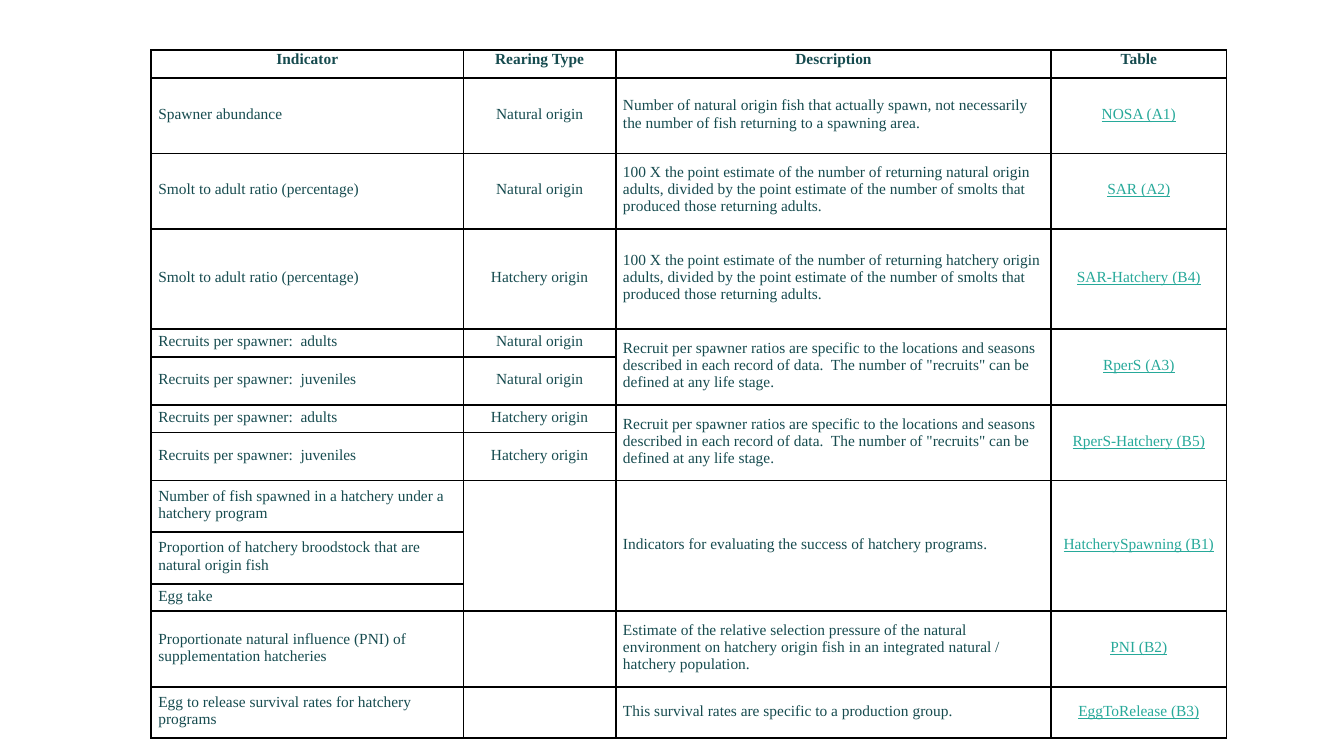
from itertools import takewhile

from lxml.etree import SubElement
from pptx import Presentation
from pptx.dml.color import RGBColor
from pptx.enum.text import MSO_ANCHOR as Anchor, PP_ALIGN as Align
from pptx.oxml.ns import qn
from pptx.util import Cm, Pt

NATURAL, HATCHERY = "Natural origin", "Hatchery origin"
SMOLT_RATIO = "Smolt to adult ratio (percentage)"
RETURN_RATIO = ("100 X the point estimate of the number of returning {} origin adults, divided by "
                "the point estimate of the number of smolts that produced those returning adults.")
RECRUITS = ("Recruit per spawner ratios are specific to the locations and seasons described in "
            "each record of data.  The number of \"recruits\" can be defined at any life stage.")
ADULTS, JUVENILES = "Recruits per spawner:  adults", "Recruits per spawner:  juveniles"

COLUMN_WIDTHS = [7.87, 3.84, 10.97, 4.42]
ROW_HEIGHTS = [0.7, 1.9, 1.9, 2.52, 0.7, 1.21, 0.7, 1.21, 1.3, 1.3, 0.7, 1.9, 1.3]
# None continues the cell above
INDICATORS = [
    ("Indicator", "Rearing Type", "Description", "Table"),
    ("Spawner abundance", NATURAL,
     "Number of natural origin fish that actually spawn, not necessarily the number of fish "
     "returning to a spawning area.", "NOSA (A1)"),
    (SMOLT_RATIO, NATURAL, RETURN_RATIO.format("natural"), "SAR (A2)"),
    (SMOLT_RATIO, HATCHERY, RETURN_RATIO.format("hatchery"), "SAR-Hatchery (B4)"),
    (ADULTS, NATURAL, RECRUITS, "RperS (A3)"),
    (JUVENILES, NATURAL, None, None),
    (ADULTS, HATCHERY, RECRUITS, "RperS-Hatchery (B5)"),
    (JUVENILES, HATCHERY, None, None),
    ("Number of fish spawned in a hatchery under a hatchery program", "",
     "Indicators for evaluating the success of hatchery programs.", "HatcherySpawning (B1)"),
    ("Proportion of hatchery broodstock that are natural origin fish", None, None, None),
    ("Egg take", None, None, None),
    ("Proportionate natural influence (PNI) of supplementation hatcheries", "",
     "Estimate of the relative selection pressure of the natural environment on hatchery origin "
     "fish in an integrated natural / hatchery population.", "PNI (B2)"),
    ("Egg to release survival rates for hatchery programs", "",
     "This survival rates are specific to a production group.", "EggToRelease (B3)"),
]


def color(hex_code):
    return RGBColor.from_string(hex_code)


def write(frame, text, font, size, ink, bold=False, underline=False, align=Align.LEFT):
    paragraph = frame.paragraphs[0]
    paragraph.alignment = align
    run = paragraph.add_run()
    run.text = text
    run.font.name, run.font.size = font, Pt(size)
    run.font.bold, run.font.underline = bold, underline
    run.font.color.rgb = color(ink)


class IndicatorSlide:
    font, size = "Times New Roman", 11
    ink, link, rule = "164B4F", "27A99A", "000000"
    rule_width = 1.5

    def __init__(self, deck):
        self.slide = deck.slides.add_slide(deck.slide_layouts[6])

    def borders(self, cell):
        properties = cell._tc.get_or_add_tcPr()
        for side in ("a:lnL", "a:lnR", "a:lnT", "a:lnB"):
            line = SubElement(properties, qn(side), w=str(Pt(self.rule_width)))
            SubElement(SubElement(line, qn("a:solidFill")), qn("a:srgbClr"), val=self.rule)

    def cell(self, cell, text, header, column):
        cell.margin_left = cell.margin_right = Cm(0.18)
        cell.margin_top, cell.margin_bottom = 0, Cm(0.08)
        cell.vertical_anchor = Anchor.TOP if header else Anchor.MIDDLE
        self.borders(cell)
        cell.fill.background()
        linked = column == 3 and not header
        write(cell.text_frame, text, self.font, self.size,
              self.link if linked else self.ink, bold=header, underline=linked,
              align=Align.CENTER if header or column in (1, 3) else Align.LEFT)

    def table(self, left, top, widths, heights, rows):
        table = self.slide.shapes.add_table(
            len(rows), len(widths), Cm(left), Cm(top), Cm(sum(widths)), Cm(sum(heights))).table
        table.first_row = table.horz_banding = False
        for column, width in zip(table.columns, widths):
            column.width = Cm(width)
        for row, height in zip(table.rows, heights):
            row.height = Cm(height)
        for r, texts in enumerate(rows):
            for c, text in enumerate(texts):
                below = len(list(takewhile(lambda later: later[c] is None, rows[r + 1:])))
                if text is not None and below:
                    table.cell(r, c).merge(table.cell(r + below, c))
                self.cell(table.cell(r, c), text or "", r == 0, c)


def main():
    deck = Presentation()
    deck.slide_width, deck.slide_height = Cm(33.87), Cm(19.05)
    IndicatorSlide(deck).table(3.81, 1.27, COLUMN_WIDTHS, ROW_HEIGHTS, INDICATORS)
    deck.save("out.pptx")


if __name__ == "__main__":
    main()
